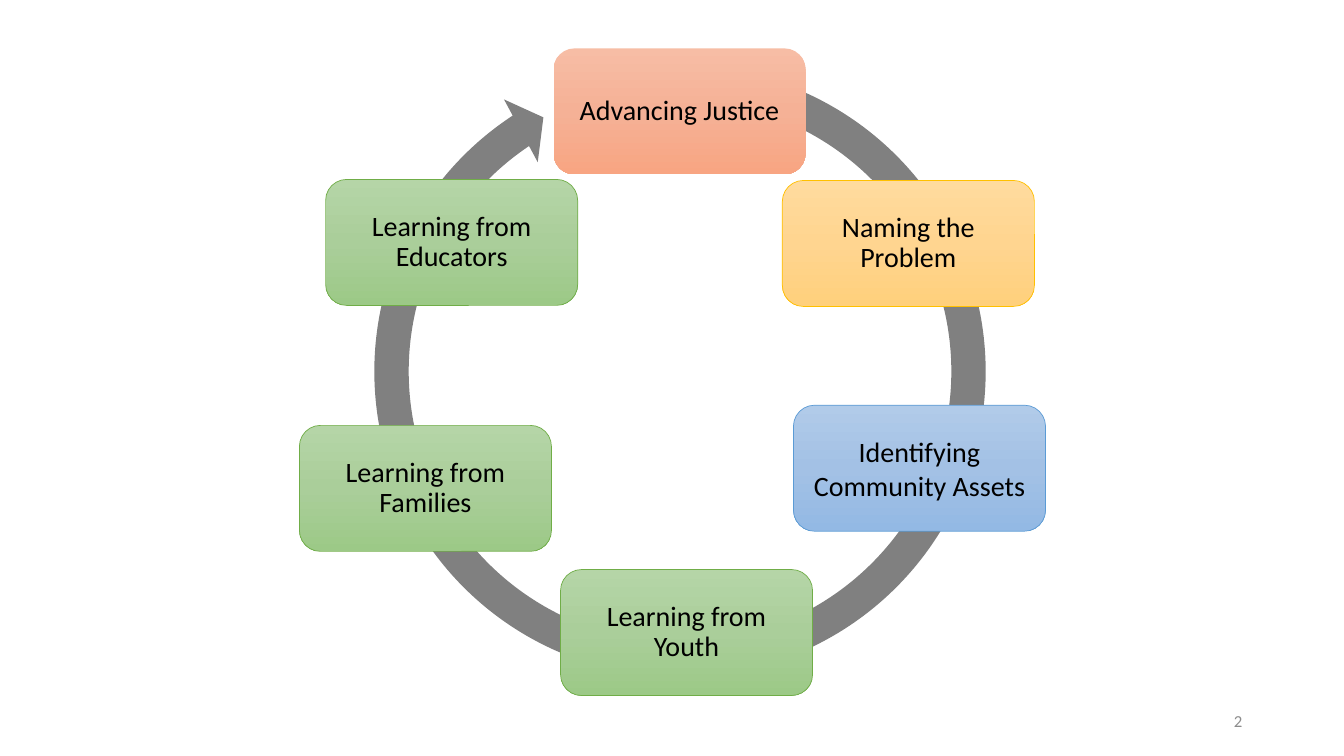
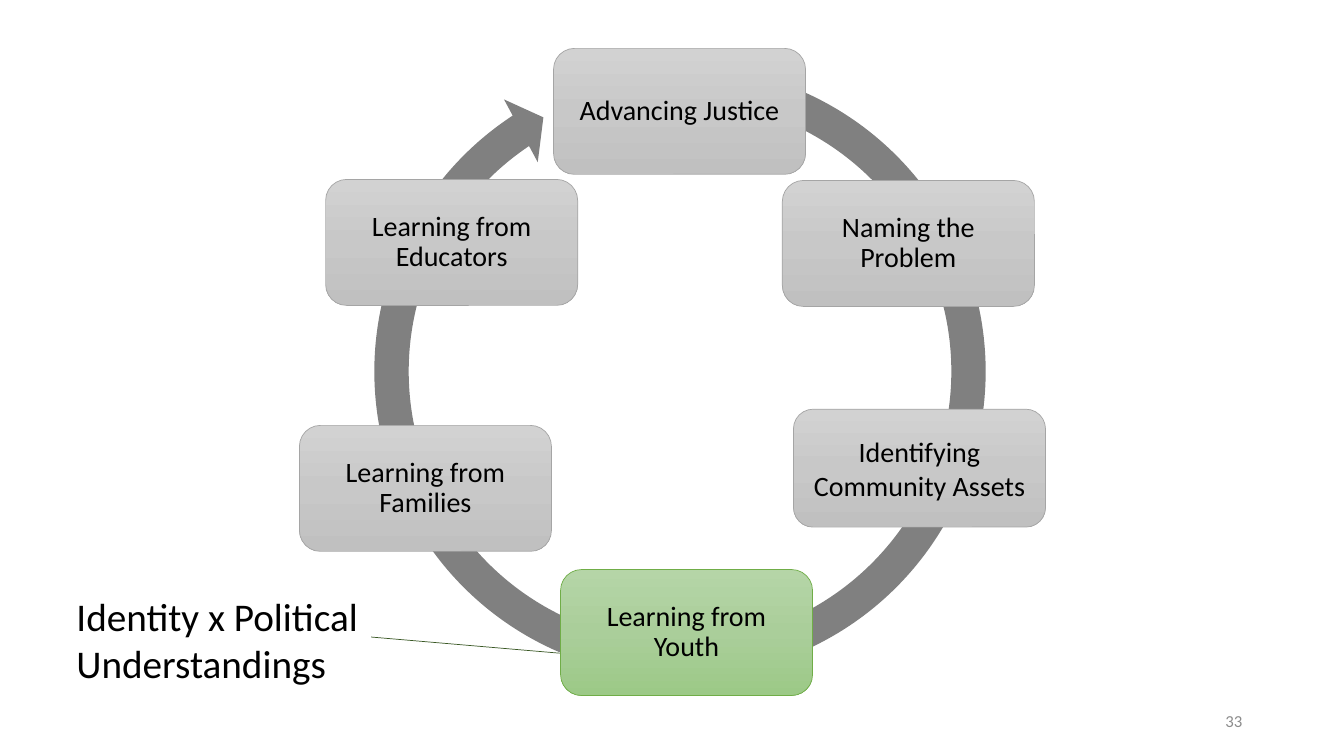
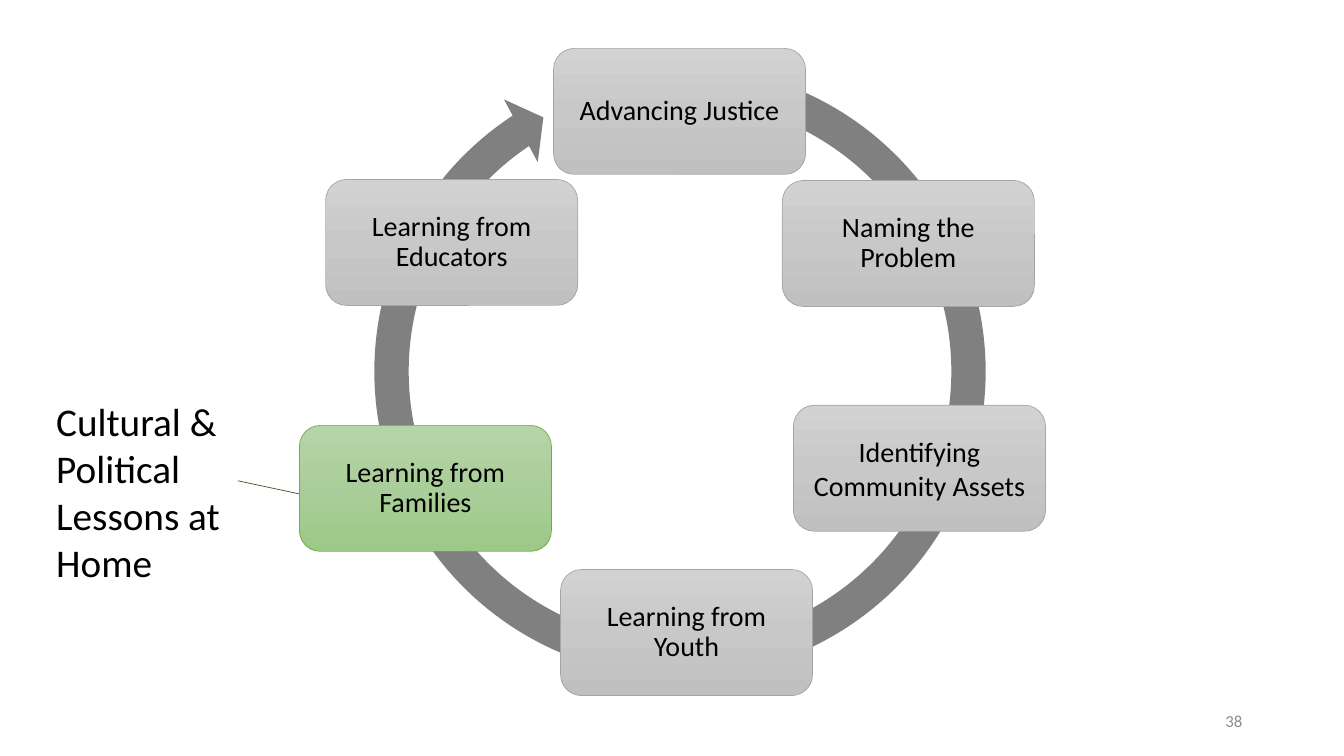
from copy import deepcopy
from dataclasses import dataclass, replace

from lxml import etree
from pptx import Presentation
from pptx import util as u
from pptx.dml.color import RGBColor
from pptx.enum import shapes, text
from pptx.oxml import ns

FONT = "Calibri"
BLACK = RGBColor(0x00, 0x00, 0x00)
RING_GREY = RGBColor(0x80, 0x80, 0x80)
NUMBER_GREY = RGBColor(0x8C, 0x8C, 0x8C)
LEADER_GREEN = RGBColor(0x38, 0x57, 0x23)


@dataclass(frozen=True)
class Tone:
    top: RGBColor
    middle: RGBColor
    bottom: RGBColor
    edge: RGBColor | None


ORANGE = Tone(RGBColor(0xF7, 0xBD, 0xA5), RGBColor(0xF5, 0xB1, 0x96),
              RGBColor(0xF8, 0xA5, 0x82), None)
GOLD = Tone(RGBColor(0xFF, 0xDB, 0x9E), RGBColor(0xFF, 0xD5, 0x90),
            RGBColor(0xFF, 0xD0, 0x7C), RGBColor(0xFF, 0xC0, 0x00))
BLUE = Tone(RGBColor(0xB1, 0xCB, 0xE9), RGBColor(0xA3, 0xC1, 0xE5),
            RGBColor(0x93, 0xB9, 0xE4), RGBColor(0x5B, 0x9B, 0xD5))
GREEN = Tone(RGBColor(0xB5, 0xD5, 0xA7), RGBColor(0xAA, 0xCE, 0x9A),
             RGBColor(0x9C, 0xC9, 0x87), RGBColor(0x70, 0xAD, 0x47))
GREY = Tone(RGBColor(0xD2, 0xD2, 0xD2), RGBColor(0xC8, 0xC8, 0xC8),
            RGBColor(0xC0, 0xC0, 0xC0), RGBColor(0xA5, 0xA5, 0xA5))


@dataclass(frozen=True)
class Step:
    lines: tuple
    left: float
    top: float
    tone: Tone
    height: float = 1.25
    spacing: float = 0.9


JUSTICE = Step(("Advancing Justice",), 2.52, 0.01, ORANGE)
PROBLEM = Step(("Naming the Problem",), 4.79, 1.32, GOLD)
ASSETS = Step(("Identifying Community Assets",), 4.9, 3.55, BLUE, spacing=1.0)
YOUTH = Step(("Learning from Youth",), 2.59, 5.18, GREEN)
FAMILIES = Step(("Learning from Families",), 0, 3.75, GREEN)
EDUCATORS = Step(("Learning from Educators",), 0.26, 1.31, GREEN)

STEP_WIDTH = 2.5
WHEEL_BOX = (2.97, 0.47)
RING_LEFT, RING_SIZE = 0.56, 6.43
RING_ADJUSTMENTS = (0.053, 3.126, 141.915, 171.485, 0.055)
NUMBER_BOX = (9.42, 6.95, 3, 0.4)


def inches(*lengths):
    return [u.Inches(length) for length in lengths]


def write(frame, lines, size, color=BLACK, align=text.PP_ALIGN.LEFT, spacing=1.0):
    frame.word_wrap = True
    for index, line in enumerate(lines):
        para = frame.add_paragraph() if index else frame.paragraphs[0]
        para.alignment = align
        para.line_spacing = spacing
        span = para.add_run()
        span.text = line
        span.font.name = FONT
        span.font.size = u.Pt(size)
        span.font.color.rgb = color


def paint(shape, tone):
    shape.shadow.inherit = False
    shape.fill.gradient()
    shape.fill.gradient_angle = 270
    first = shape._element.spPr.find(".//" + ns.qn("a:gs"))
    first.addnext(deepcopy(first))
    colors = (tone.top, tone.middle, tone.bottom)
    for index, (stop, color) in enumerate(zip(shape.fill.gradient_stops, colors)):
        stop.position = index / 2
        stop.color.rgb = color
    if tone.edge is None:
        shape.line.fill.background()
    else:
        shape.line.color.rgb = tone.edge
        shape.line.width = u.Pt(0.5)


def add_step(page, step, left, top):
    box = page.shapes.add_shape(
        shapes.MSO_SHAPE.ROUNDED_RECTANGLE,
        *inches(left + step.left, top + step.top, STEP_WIDTH, step.height))
    paint(box, step.tone)
    frame = box.text_frame
    frame.vertical_anchor = text.MSO_ANCHOR.MIDDLE
    frame.margin_left = frame.margin_right = u.Inches(0.08)
    frame.margin_top = frame.margin_bottom = u.Inches(0.08)
    write(frame, step.lines, 20, align=text.PP_ALIGN.CENTER, spacing=step.spacing)


def add_wheel(page, box, steps):
    left, top = box
    ring = page.shapes.add_shape(
        shapes.MSO_SHAPE.CIRCULAR_ARROW,
        *inches(left + RING_LEFT, top, RING_SIZE, RING_SIZE))
    ring.shadow.inherit = False
    for index, value in enumerate(RING_ADJUSTMENTS):
        ring.adjustments[index] = value
    ring.fill.solid()
    ring.fill.fore_color.rgb = RING_GREY
    ring.line.fill.background()
    for step in steps:
        add_step(page, step, left, top)


def add_callout(page, box, lines, start, end):
    left, top = box[:2]
    note = page.shapes.add_textbox(*inches(*box))
    write(note.text_frame, lines, 28)
    leader = page.shapes.add_connector(
        shapes.MSO_CONNECTOR.STRAIGHT,
        *inches(left + start[0], top + start[1], left + end[0], top + end[1]))
    leader.line.color.rgb = LEADER_GREEN
    leader.line.width = u.Pt(0.5)
    etree.SubElement(leader._element.spPr, ns.qn("a:effectLst"))


def add_page(deck, number, steps):
    page = deck.slides.add_slide(deck.slide_layouts[6])
    box = page.shapes.add_textbox(*inches(*NUMBER_BOX))
    box.text_frame.vertical_anchor = text.MSO_ANCHOR.MIDDLE
    write(box.text_frame, (str(number),), 12, NUMBER_GREY, text.PP_ALIGN.RIGHT)
    add_wheel(page, WHEEL_BOX, steps)
    return page


def highlight(steps, chosen):
    return [step if step.lines == chosen.lines else replace(step, tone=GREY)
            for step in steps]


def main():
    deck = Presentation()
    deck.slide_width, deck.slide_height = inches(13.33, 7.5)

    cycle = [JUSTICE, PROBLEM, ASSETS, YOUTH, FAMILIES, EDUCATORS]
    add_page(deck, 2, cycle)

    low_assets = replace(ASSETS, top=3.59, height=1.17)
    youth_cycle = [JUSTICE, PROBLEM, low_assets, YOUTH, FAMILIES, EDUCATORS]
    page = add_page(deck, 33, highlight(youth_cycle, YOUTH))
    add_callout(page, (0.66, 5.83, 3.29, 1.04),
                ("Identity x Political Understandings",),
                (3.02, 0.49), (4.89, 0.65))

    split_assets = replace(ASSETS, lines=("Identifying", "Community Assets"))
    family_cycle = [JUSTICE, PROBLEM, split_assets, YOUTH, FAMILIES, EDUCATORS]
    page = add_page(deck, 38, highlight(family_cycle, FAMILIES))
    add_callout(page, (0.46, 3.89, 2.34, 1.99),
                ("Cultural & Political", "Lessons at Home"),
                (1.9, 0.88), (2.51, 1.01))

    deck.save("out.pptx")


if __name__ == "__main__":
    main()
